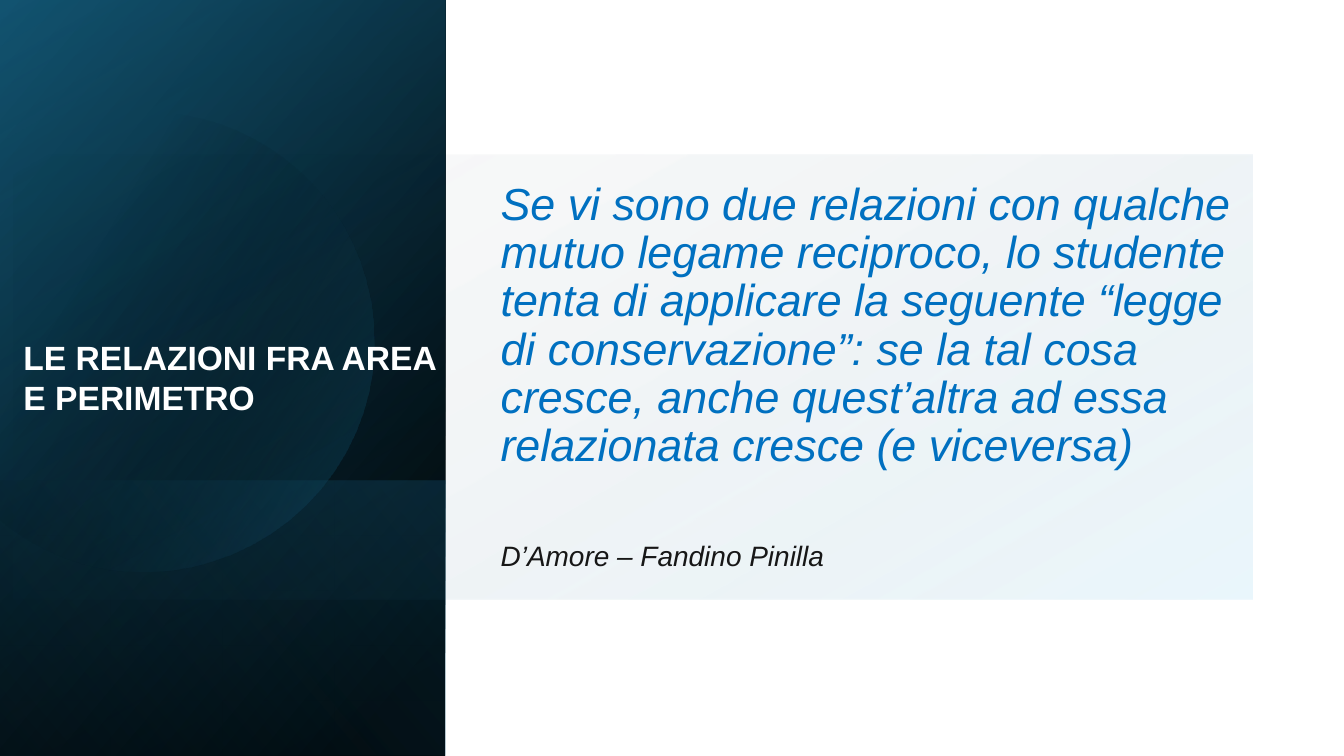
from lxml import etree
from pptx import Presentation
from pptx.dml.color import RGBColor
from pptx.enum import shapes, text
from pptx.oxml.ns import qn
from pptx.util import Pt

W, H = 720, 405
PANEL_W = 238.5


def color(hex_code):
    """Turn a hex string into a colour."""
    return RGBColor.from_string(hex_code)


def fill_gradient(sp, stops, angle):
    """Fill a shape with (position, colour, opacity) stops at a clockwise angle."""
    sp.shadow.inherit = False
    sp.line.fill.background()
    sp.fill.gradient()
    sp.fill.gradient_angle = 360 - angle
    stop_list = sp._element.spPr.find(qn("a:gradFill")).find(qn("a:gsLst"))
    for old in list(stop_list):
        stop_list.remove(old)
    for position, hex_code, opacity in stops:
        gs = etree.SubElement(stop_list, qn("a:gs"), pos=str(position * 1000))
        clr = etree.SubElement(gs, qn("a:srgbClr"), val=hex_code)
        if opacity < 100:
            etree.SubElement(clr, qn("a:alpha"), val=str(opacity * 1000))


def add_rect(slide, x, y, w, h):
    """Add a rectangle placed in points."""
    return slide.shapes.add_shape(
        shapes.MSO_SHAPE.RECTANGLE, Pt(x), Pt(y), Pt(w), Pt(h))


def add_flipped(slide, box, stops, angle, turned=False):
    """Add a mirrored gradient rectangle, optionally a quarter turn, covering the box."""
    x, y, w, h = box
    if turned:
        x, y, w, h = x + (w - h) / 2, y + (h - w) / 2, h, w
    sp = add_rect(slide, x, y, w, h)
    sp._element.spPr.find(qn("a:xfrm")).set("flipH", "1")
    if turned:
        sp.rotation = 90
    fill_gradient(sp, stops, angle)
    return sp


def curve_points(start, controls, steps=16):
    """Sample a cubic curve given its start and three further points."""
    points = [start, *controls]
    result = []
    for i in range(1, steps + 1):
        t = i / steps
        weights = ((1 - t) ** 3, 3 * t * (1 - t) ** 2, 3 * t * t * (1 - t), t ** 3)
        result.append(tuple(sum(k * p[axis] for k, p in zip(weights, points))
                            for axis in (0, 1)))
    return result


def add_disc(slide, x, y):
    """Add the glowing disc, cut off at the left, relative to a corner."""
    outline = [(80, 60)]
    for controls in (
        ((132.5, 60.5), (180.7, 95.8), (195.8, 149)),
        ((214.6, 213.8), (177, 282), (111.6, 301)),
        ((70.6, 313.2), (28.8, 303), (-1.4, 277.2)),
    ):
        outline += curve_points(outline[-1], controls)
    outline += [(-8, 271.5), (-8, 94.3), (0, 87)]
    for controls in (
        ((12.2, 77), (27.4, 69), (43.2, 64)),
        ((55.4, 61.2), (67.7, 59), (80, 60)),
    ):
        outline += curve_points(outline[-1], controls)
    points = [(Pt(x + px), Pt(y + py)) for px, py in outline]
    builder = slide.shapes.build_freeform(*points[0])
    builder.add_line_segments(points[1:], close=True)
    fill_gradient(builder.convert_to_shape(),
                  [(0, "000000", 0), (29, "000000", 0), (100, "156082", 42)], 30)


def set_frame(tf):
    """Wrap, centre vertically and set the margins of a text frame."""
    tf.word_wrap = True
    tf.vertical_anchor = text.MSO_ANCHOR.MIDDLE
    tf.margin_left = tf.margin_right = Pt(5.4)
    tf.margin_top = tf.margin_bottom = Pt(2.7)


def add_run(p, words, size, hex_code, bold=False, italic=False):
    """Add one left-aligned run of Arial."""
    p.alignment = text.PP_ALIGN.LEFT
    r = p.add_run()
    r.text = words
    r.font.name, r.font.size = "Arial", Pt(size)
    r.font.bold, r.font.italic = bold, italic
    r.font.color.rgb = color(hex_code)


def add_panel(slide, x, y, w, h):
    """Add the dark side panel with its glow, foot and disc."""
    add_flipped(slide, (x, y, w, h),
                [(0, "000000", 100), (8, "000000", 100), (100, "0F4861", 100)], 50, True)
    add_flipped(slide, (x, y, w, h),
                [(0, "000000", 0), (99, "156082", 45), (100, "156082", 45)], 30, True)
    foot = 147.75
    add_flipped(slide, (x, y + h - foot, w, foot),
                [(0, "156082", 28), (2, "156082", 28), (100, "000000", 29)], 130, True)
    add_disc(slide, x, y)


def add_title_band(slide, x, y, w, h):
    """Add the translucent band that carries the title."""
    sp = add_flipped(slide, (x, y, w, h),
                     [(0, "000000", 0), (99, "43AFE2", 11), (100, "43AFE2", 11)], 120)
    tf = sp.text_frame
    set_frame(tf)
    add_run(tf.paragraphs[0], "LE RELAZIONI FRA AREA", 18, "FFFFFF", bold=True)
    add_run(tf.add_paragraph(), "E PERIMETRO", 18, "FFFFFF", bold=True)


def add_quote(slide, x, y, w, h):
    """Add the quotation and its authors."""
    tf = slide.shapes.add_textbox(Pt(x), Pt(y), Pt(w), Pt(h)).text_frame
    set_frame(tf)
    quote, authors = tf.paragraphs[0], tf.add_paragraph()
    add_run(quote, "Se vi sono due relazioni con qualche mutuo legame reciproco, "
            "lo studente tenta di applicare la seguente “legge di conservazione”: "
            "se la tal cosa cresce, anche quest’altra ad essa relazionata cresce "
            "(e viceversa)", 24, "0070C0", italic=True)
    add_run(authors, "D’Amore – Fandino Pinilla", 15, "171717", italic=True)
    quote.line_spacing = authors.line_spacing = 0.9
    authors.space_before = Pt(38)


def main():
    """Build the slide and save it."""
    prs = Presentation()
    prs.slide_width, prs.slide_height = Pt(W), Pt(H)
    slide = prs.slides.add_slide(prs.slide_layouts[6])
    backdrop = add_rect(slide, 0, 0, W, H)
    backdrop.shadow.inherit = False
    backdrop.fill.solid()
    backdrop.fill.fore_color.rgb = color("FFFFFF")
    backdrop.line.fill.background()
    add_panel(slide, 0, 0, PANEL_W, H)
    add_title_band(slide, 7.2, 82.8, 663.8, 238.5)
    add_quote(slide, 262.8, 38.2, 408.2, 327.6)
    prs.save("out.pptx")


if __name__ == "__main__":
    main()
